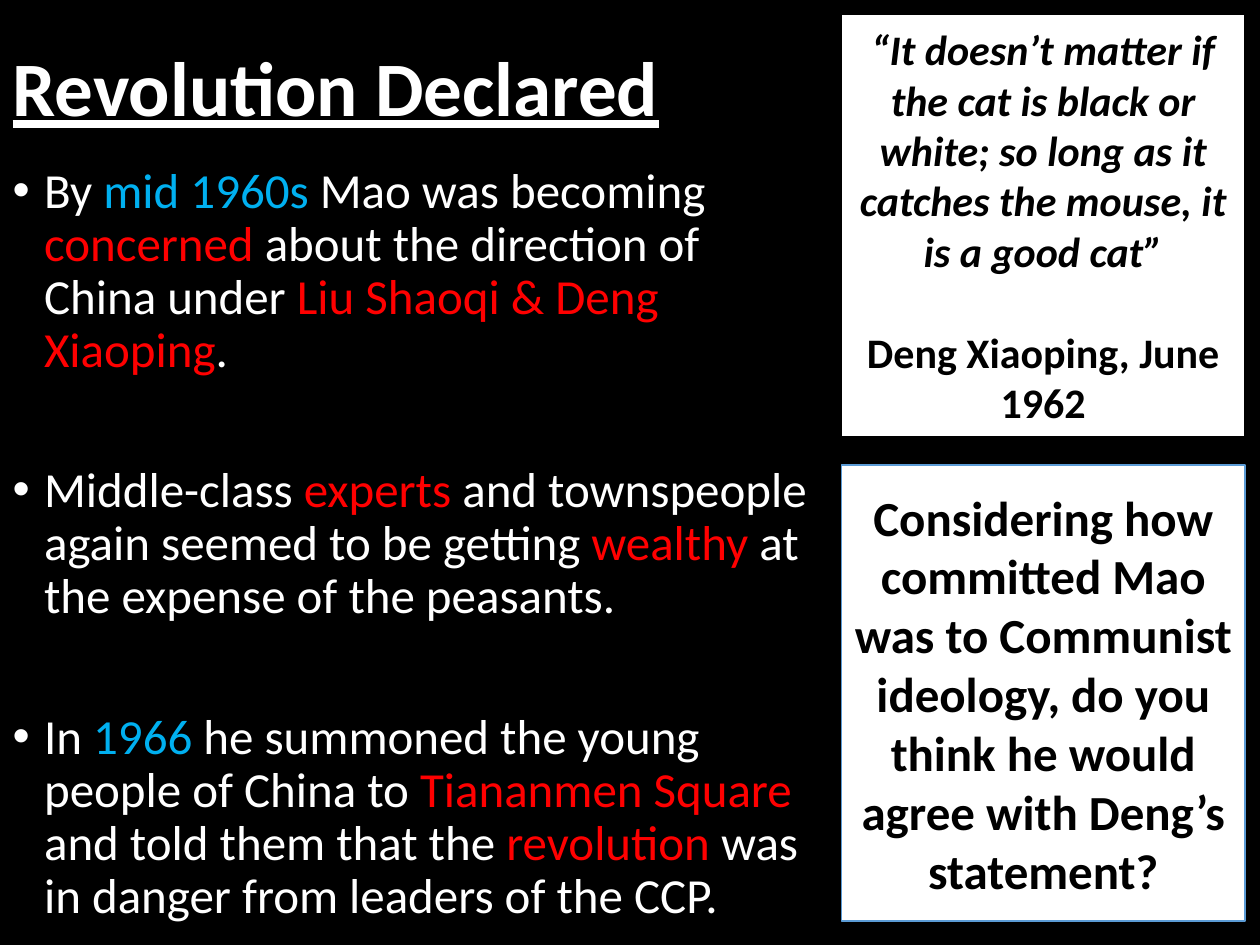
"""Build the "Revolution Declared" slide."""
from pptx import Presentation
from pptx import util as u
from pptx.dml.color import RGBColor
from pptx.enum import shapes, text

BLACK = RGBColor(0x00, 0x00, 0x00)
WHITE = RGBColor(0xFF, 0xFF, 0xFF)
RED = RGBColor(0xFF, 0x00, 0x00)
CYAN = RGBColor(0x00, 0xB0, 0xF0)
BLUE = RGBColor(0x5B, 0x9B, 0xD5)

FONT = "Calibri"
PANEL_LEFT, PANEL_WIDTH = 6.68, 3.2

BULLETS = [
    [("By ", WHITE), ("mid 1960s ", CYAN), ("Mao was becoming ", WHITE),
     ("concerned", RED), (" about the direction of China under ", WHITE),
     ("Liu Shaoqi & Deng Xiaoping", RED), (".", WHITE)],
    [("Middle-class ", WHITE), ("experts", RED),
     (" and townspeople again seemed to be getting ", WHITE),
     ("wealthy", RED), (" at the expense of the peasants.", WHITE)],
    [("In ", WHITE), ("1966 ", CYAN),
     ("he summoned the young people of China to ", WHITE),
     ("Tiananmen Square ", RED), ("and told them that the ", WHITE),
     ("revolution", RED), (" was in danger from leaders of the CCP.", WHITE)],
]
QUOTE = ("“It doesn’t matter if the cat is black or white; "
         "so long as it catches the mouse, it is a good cat”")
SOURCE = "Deng Xiaoping, June 1962"
QUESTION = ("Considering how committed Mao was to Communist ideology, "
            "do you think he would agree with Deng’s statement?")


def place(sp, left, top, width, height):
    """Move and size a shape, with lengths in inches."""
    sp.left, sp.top = u.Inches(left), u.Inches(top)
    sp.width, sp.height = u.Inches(width), u.Inches(height)


def style(r, size, color, bold=False, italic=False, underline=False):
    """Format one run."""
    f = r.font
    f.name, f.size, f.color.rgb = FONT, u.Pt(size), color
    f.bold, f.italic, f.underline = bold, italic, underline


def fill_title(sp, title):
    """Write the underlined slide title."""
    place(sp, 0, 0, 8.62, 1.45)
    tf = sp.text_frame
    tf.text = title
    tf.auto_size = text.MSO_AUTO_SIZE.NONE
    tf.vertical_anchor = text.MSO_ANCHOR.MIDDLE
    p = tf.paragraphs[0]
    p.alignment = text.PP_ALIGN.LEFT
    p.line_spacing = 0.9
    style(p.runs[0], 44, WHITE, bold=True, underline=True)


def fill_bullets(sp, bullets):
    """Write the bulleted list with coloured key words."""
    place(sp, 0, 1.27, 6.52, 6.23)
    tf = sp.text_frame
    tf.auto_size = text.MSO_AUTO_SIZE.NONE
    for i, parts in enumerate(bullets):
        p = tf.add_paragraph() if i else tf.paragraphs[0]
        p.line_spacing = 0.9
        p.space_before = u.Pt(50 if i else 10)
        pPr = p._p.get_or_add_pPr()
        pPr.set("marL", str(u.Inches(0.25)))
        pPr.set("indent", str(u.Inches(-0.25)))
        for words, color in parts:
            r = p.add_run()
            r.text = words
            style(r, 28, color)


def add_panel(slide, top, height, line, size, paragraphs):
    """Add a white panel of centred bold (text, italic) paragraphs."""
    sp = slide.shapes.add_shape(
        shapes.MSO_SHAPE.RECTANGLE, u.Inches(PANEL_LEFT), u.Inches(top),
        u.Inches(PANEL_WIDTH), u.Inches(height))
    sp.shadow.inherit = False
    sp.fill.solid()
    sp.fill.fore_color.rgb = WHITE
    sp.line.color.rgb = line
    sp.line.width = u.Pt(1)
    tf = sp.text_frame
    tf.word_wrap = True
    tf.vertical_anchor = text.MSO_ANCHOR.MIDDLE
    for i, (words, italic) in enumerate(paragraphs):
        p = tf.add_paragraph() if i else tf.paragraphs[0]
        p.text = words
        p.alignment = text.PP_ALIGN.CENTER
        p.space_before = u.Pt(29 if i else 0)
        style(p.runs[0], size, BLACK, bold=True, italic=italic)


def main():
    """Build and save the slide."""
    prs = Presentation()
    prs.slide_width, prs.slide_height = u.Inches(10), u.Inches(7.5)
    slide = prs.slides.add_slide(prs.slide_layouts[1])
    slide.background.fill.solid()
    slide.background.fill.fore_color.rgb = BLACK
    fill_title(slide.shapes.title, "Revolution Declared")
    fill_bullets(slide.placeholders[1], BULLETS)
    add_panel(slide, 0.11, 3.36, BLACK, 24, [(QUOTE, True), (SOURCE, False)])
    add_panel(slide, 3.69, 3.62, BLUE, 28, [(QUESTION, False)])
    prs.save("out.pptx")


if __name__ == "__main__":
    main()
